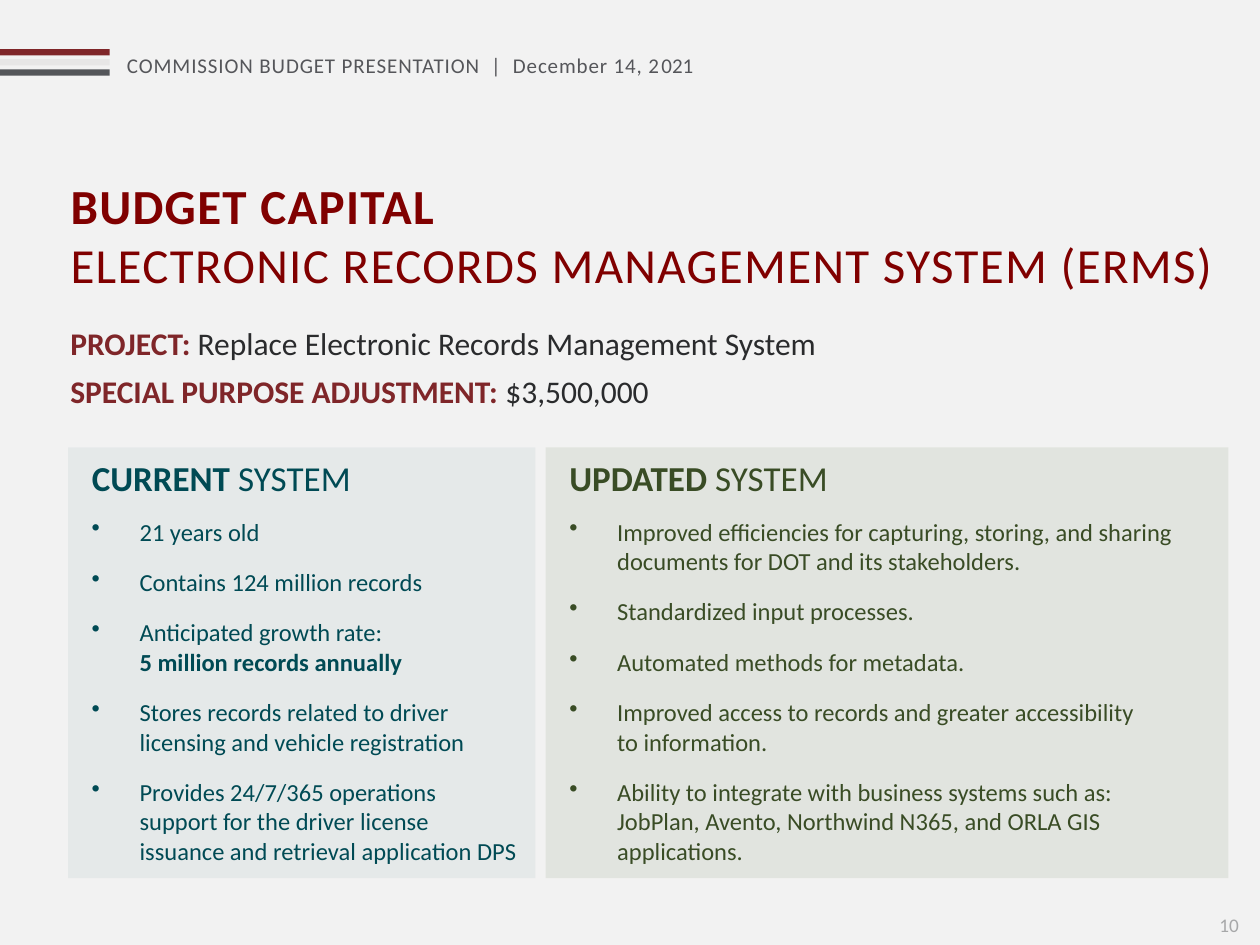
"""Build the budget slide comparing the current and updated records systems."""
import pptx
import pptx.dml.color
import pptx.enum.shapes
import pptx.enum.text
import pptx.oxml
import pptx.oxml.ns
import pptx.util

THEME = {
    "font": "Calibri", "bg": "F2F2F2", "title": "800000", "accent": "7F2629",
    "silver": "E7E6E6", "slate": "54565A", "header": "55565A", "body": "2A2B2D",
    "number": "A7A8A9", "teal": "004A54", "olive": "394C25", "green": "557238",
    "title_pt": 28, "heading_pt": 20, "project_pt": 18, "bullet_pt": 14,
    "header_pt": 12, "number_pt": 11,
}
COLUMNS, ROWS = 100, 75

prs = pptx.Presentation()
prs.slide_width = pptx.util.Inches(10)
prs.slide_height = pptx.util.Inches(7.5)
col, row = prs.slide_width / COLUMNS, prs.slide_height / ROWS
s = prs.slides.add_slide(prs.slide_layouts[5])
s.background.fill.solid()
s.background.fill.fore_color.rgb = pptx.dml.color.RGBColor.from_string(THEME["bg"])


def write(sp, text, new=True, size="bullet_pt", color="body", bold=False, spacing=0, after=0, bullet=False):
    """Add text to a shape, in a new paragraph or at the end of the last one."""
    tf = sp.text_frame
    p = tf.paragraphs[-1]
    if new and p.runs:
        p = tf.add_paragraph()
    if new:
        p.alignment = pptx.enum.text.PP_ALIGN.LEFT
        p.space_after = pptx.util.Pt(after)
    if bullet:
        pPr = p._p.get_or_add_pPr()
        pPr.set("marL", str(pptx.util.Inches(0.38)))
        pPr.set("indent", str(-pptx.util.Inches(0.38)))
        pptx.oxml.ns.qn("a:buChar")
        pPr.append(pptx.oxml.parse_xml(f'<a:buChar {pptx.oxml.ns.nsdecls("a")} char="•"/>'))
    for i, line in enumerate(text.split("\n")):
        if i:
            p.add_line_break()
        if not line:
            continue
        r = p.add_run()
        r.text = line
        r.font.name = THEME["font"]
        r.font.size = pptx.util.Pt(THEME[size])
        r.font.bold = bold
        r.font.color.rgb = pptx.dml.color.RGBColor.from_string(THEME[color])
        if spacing:
            r._r.get_or_add_rPr().set("spc", str(int(spacing * 100)))


def frame(left, top, width, height, sp=None):
    """Place a wrapping text frame on the grid."""
    box = [int(left * col), int(top * row), int(width * col), int(height * row)]
    sp = sp or s.shapes.add_textbox(*box)
    sp.left, sp.top, sp.width, sp.height = box
    sp.text_frame.word_wrap = True
    sp.text_frame.auto_size = pptx.enum.text.MSO_AUTO_SIZE.NONE
    sp.text_frame.vertical_anchor = pptx.enum.text.MSO_ANCHOR.TOP
    return sp


stripes = [(0, 3.9 + 0.8 * i, 8.7, 0.5, c, 100) for i, c in enumerate(("accent", "silver", "slate"))]
panels = [(5.4, 35.5, 37.1, 34.2, "teal", 5), (43.3, 35.5, 54.2, 34.2, "green", 10)]
for left, top, width, height, color, opacity in stripes + panels:
    sp = s.shapes.add_shape(pptx.enum.shapes.MSO_SHAPE.RECTANGLE,
                            int(left * col), int(top * row), int(width * col), int(height * row))
    sp.shadow.inherit = False
    sp.line.fill.background()
    sp.fill.solid()
    sp.fill.fore_color.rgb = pptx.dml.color.RGBColor.from_string(THEME[color])
    if opacity < 100:
        clr = sp._element.spPr.find(".//" + pptx.oxml.ns.qn("a:srgbClr"))
        clr.append(pptx.oxml.parse_xml(f'<a:alpha {pptx.oxml.ns.nsdecls("a")} val="{opacity * 1000}"/>'))

header = frame(9.1, 3.7, 48.4, 5)
write(header, "COMMISSION BUDGET PRESENTATION  |  December 14, 2", size="header_pt", color="header", spacing=0.5)
write(header, "021", new=False, size="header_pt", color="header")

title = frame(4.6, 13.4, 95.6, 10.4, s.shapes.title)
write(title, "BUDGET CAPITAL", size="title_pt", color="title", bold=True, spacing=0.8)
write(title, "ELECTRONIC RECORDS MANAGEMENT SYSTEM (ERMS)", size="title_pt", color="title", spacing=0.8)

project = frame(4.6, 25.2, 91.3, 7.9)
for label, value in (("PROJECT: ", "Replace Electronic Records Management System"),
                     ("SPECIAL PURPOSE ADJUSTMENT: ", "$3,500,000")):
    write(project, label, size="project_pt", color="accent", bold=True, after=6)
    write(project, value, new=False, size="project_pt")

systems = [
    (6.3, 35.7, "CURRENT ", "teal", [
        ("21 years old", ""),
        ("Contains 124 million records", ""),
        ("Anticipated growth rate:\n", "5 million records annually"),
        ("Stores records related to driver licensing and vehicle registration", ""),
        ("Provides 24/7/365 operations support for the driver license issuance "
         "and retrieval application DPS", "")]),
    (44.2, 53.6, "UPDATED ", "olive", [
        ("Improved efficiencies for capturing, storing, and sharing documents for DOT and its stakeholders.", ""),
        ("Standardized input processes.", ""),
        ("Automated methods for metadata.", ""),
        ("Improved access to records and greater accessibility\nto information.", ""),
        ("Ability to integrate with business systems such as:\n"
         "JobPlan, Avento, Northwind N365, and ORLA GIS applications.", "")]),
]
for left, width, name, color, points in systems:
    heading = frame(left, 35.7, 32.1, 4.4)
    write(heading, name, size="heading_pt", color=color, bold=True, after=6)
    write(heading, "SYSTEM", new=False, size="heading_pt", color=color)
    bullets = frame(left, 40.5, width, 28.9)
    for plain, strong in points:
        write(bullets, plain, color=color, after=12, bullet=True)
        write(bullets, strong, new=False, color=color, bold=True)

number = frame(95.8, 72, 4.4, 3)
write(number, "10", size="number_pt", color="number")

prs.save("out.pptx")
